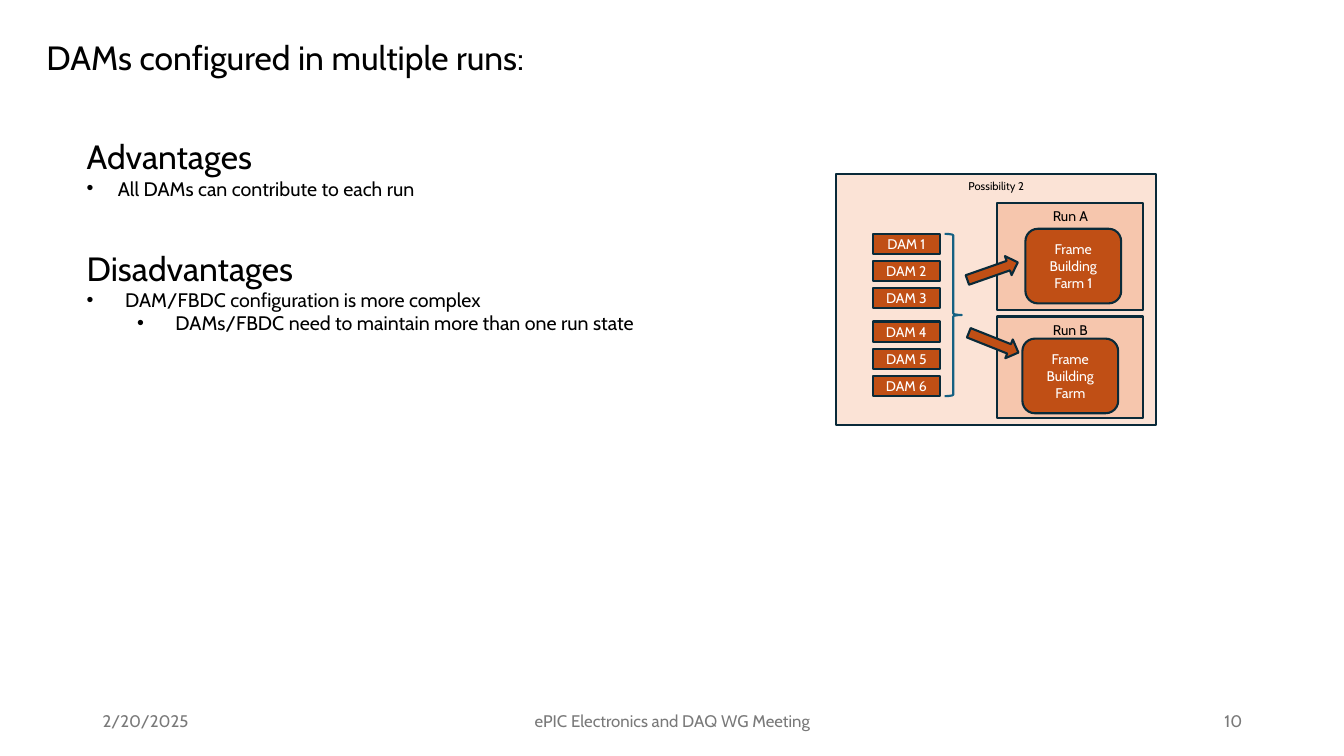
"""Build the slide on DAMs configured in multiple runs."""
from pptx import Presentation
from pptx.dml.color import RGBColor
from pptx.enum import shapes, text
from pptx.util import Inches, Pt
from lxml import etree

FONT = "Cabin"
BLACK, WHITE, GREY = "000000", "FFFFFF", "797979"
NAVY, BLUE, RUST = "092A39", "156082", "C04F15"
PALE, PEACH = "FBE3D6", "F6C6AD"
KIND, ALIGN, ANCHOR = shapes.MSO_SHAPE, text.PP_ALIGN, text.MSO_ANCHOR

TITLE = "DAMs configured in multiple runs:"
# text, size, level, left margin, hanging indent, space before
BODY = [
    ("Advantages", 24, 0, 0, 0, 0),
    ("All DAMs can contribute to each run", 14, 0, 0.31, 0.31, 0),
    ("Disadvantages", 24, 0, 0, 0, 34),
    ("DAM/FBDC configuration is more complex", 14, 0, 0.38, 0.38, 0),
    ("DAMs/FBDC need to maintain more than one run state", 14, 1, 0.88, 0.38, 0),
]
FOOTER = [
    ("2/20/2025", 0.92, 3, ALIGN.LEFT),
    ("ePIC Electronics and DAQ WG Meeting", 4.42, 4.5, ALIGN.CENTER),
    ("10", 9.42, 3, ALIGN.RIGHT),
]
PANELS = [
    ("Possibility 2", (8.29, 1.73, 3.18, 2.49), PALE, 8),
    ("Run B", (9.89, 3.14, 1.45, 1.01), PEACH, 10),
    ("Run A", (9.89, 2.01, 1.45, 1.07), PEACH, 10),
]
GROUPS = [(2.32, ("DAM 1", "DAM 2", "DAM 3")), (3.19, ("DAM 4", "DAM 5", "DAM 6"))]
STEP = 0.27
FARMS = [("Frame Building Farm 1", 10.17, 2.27), ("Frame Building Farm", 10.14, 3.36)]
ARROWS = [(9.58, 2.59, -19.3), (9.59, 3.3, 21.7)]


def color(code):
    return RGBColor.from_string(code)


def write(para, words, size, tint, align=ALIGN.LEFT):
    para.alignment = align
    run = para.add_run()
    run.text = words
    run.font.name, run.font.size = FONT, Pt(size)
    run.font.color.rgb = color(tint)


def place(shape, box):
    shape.left, shape.top, shape.width, shape.height = map(Inches, box)


def frame(shape, anchor):
    body = shape.text_frame
    body.word_wrap = True
    body.auto_size = text.MSO_AUTO_SIZE.NONE
    body.vertical_anchor = anchor
    return body


def draw(slide, kind, box, fill, line=NAVY):
    shape = slide.shapes.add_shape(kind, *map(Inches, box))
    shape.shadow.inherit = False
    if fill:
        shape.fill.solid()
        shape.fill.fore_color.rgb = color(fill)
    else:
        shape.fill.background()
    shape.line.color.rgb = color(line)
    shape.line.width = Pt(1.5)
    return shape


def label(shape, words, size, tint, anchor):
    write(frame(shape, anchor).paragraphs[0], words, size, tint, ALIGN.CENTER)


def bullet(para, margin, hang):
    props = para._p.get_or_add_pPr()
    props.set("marL", str(Inches(margin)))
    props.set("indent", str(-Inches(hang)))
    space = props.nsmap["a"]
    if hang:
        font = etree.SubElement(props, f"{{{space}}}buFont")
        font.set("typeface", "Arial")
        etree.SubElement(props, f"{{{space}}}buChar").set("char", "•")
    else:
        etree.SubElement(props, f"{{{space}}}buNone")


def prose(slide):
    title, body = slide.placeholders
    place(title, (0.36, 0.32, 8.96, 0.74))
    write(frame(title, ANCHOR.TOP).paragraphs[0], TITLE, 24, BLACK)
    place(body, (0.76, 1.3, 5.71, 2.79))
    area = frame(body, ANCHOR.TOP)
    for i, (words, size, level, margin, hang, gap) in enumerate(BODY):
        para = area.add_paragraph() if i else area.paragraphs[0]
        para.level = level
        para.space_before = Pt(gap)
        bullet(para, margin, hang)
        write(para, words, size, BLACK)
    for words, left, width, align in FOOTER:
        note = slide.shapes.add_textbox(*map(Inches, (left, 6.95, width, 0.4)))
        write(frame(note, ANCHOR.MIDDLE).paragraphs[0], words, 12, GREY, align)


def diagram(slide):
    for words, box, fill, size in PANELS:
        panel = draw(slide, KIND.RECTANGLE, box, fill)
        label(panel, words, size, BLACK, ANCHOR.TOP)
    for top, names in GROUPS:
        for i, name in enumerate(names):
            box = (8.66, top + i * STEP, 0.66, 0.2)
            label(draw(slide, KIND.RECTANGLE, box, RUST), name, 10, WHITE, ANCHOR.MIDDLE)
    for words, left, top in FARMS:
        farm = draw(slide, KIND.ROUNDED_RECTANGLE, (left, top, 0.95, 0.74), RUST)
        label(farm, words, 10, WHITE, ANCHOR.MIDDLE)
    for left, top, turn in ARROWS:
        draw(slide, KIND.RIGHT_ARROW, (left, top, 0.53, 0.2), RUST).rotation = turn
    draw(slide, KIND.RIGHT_BRACE, (9.37, 2.32, 0.17, 1.61), None, BLUE)


def main():
    deck = Presentation()
    deck.slide_width, deck.slide_height = Inches(13.33), Inches(7.5)
    slide = deck.slides.add_slide(deck.slide_layouts[1])
    prose(slide)
    diagram(slide)
    deck.save("out.pptx")


if __name__ == "__main__":
    main()
